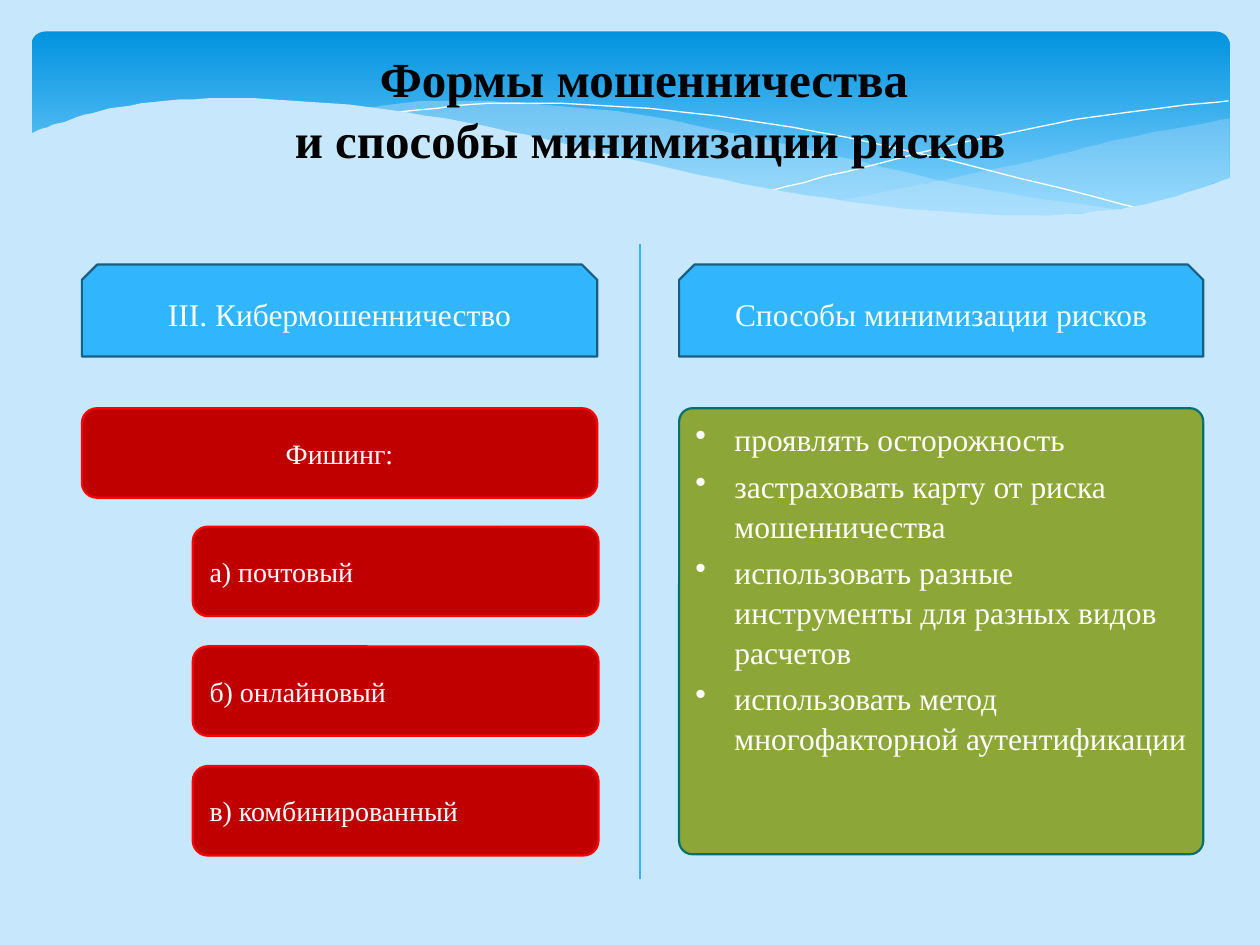
"""Build a slide on forms of fraud and ways to reduce the risks."""
from lxml import etree
from pptx import Presentation
from pptx.dml.color import RGBColor
from pptx.enum.shapes import MSO_CONNECTOR, MSO_SHAPE
from pptx.enum.text import MSO_ANCHOR, PP_ALIGN
from pptx.oxml.ns import qn
from pptx.util import Inches, Pt

ROUND = MSO_SHAPE.ROUNDED_RECTANGLE
SNIP = MSO_SHAPE.SNIP_2_SAME_RECTANGLE
LEFT, CENTER = PP_ALIGN.LEFT, PP_ALIGN.CENTER
FONT = "Times New Roman"
STEPS = 8
HEX = {
    "sky": "C6E7FC", "deep": "0293E0", "pale": "83D3FE", "white": "FFFFFF",
    "black": "000000", "blue": "31B6FD", "navy": "195F84", "dark": "C00000",
    "red": "FF0000", "green": "8CA737", "teal": "03706E",
}
RGB = {name: RGBColor.from_string(code) for name, code in HEX.items()}

deck = Presentation()
deck.slide_width, deck.slide_height = Inches(10), Inches(7.5)
slide = deck.slides.add_slide(deck.slide_layouts[6])
slide.background.fill.solid()
slide.background.fill.fore_color.rgb = RGB["sky"]
shapes = slide.shapes


def add_box(kind, place, fill, line):
    box = shapes.add_shape(kind, *[Inches(n) for n in place])
    box.shadow.inherit = False
    box.fill.solid()
    box.fill.fore_color.rgb = RGB[fill]
    box.line.color.rgb = RGB[line]
    box.line.width = Pt(1.25)
    box.text_frame.word_wrap = True
    return box


def write(para, text, size, color, align):
    para.text = text
    para.alignment = align
    para.font.name = FONT
    para.font.size = Pt(size)
    para.font.color.rgb = RGB[color]


band = add_box(ROUND, (0.25, 0.25, 9.51, 1.56), "deep", "deep")
band.adjustments[0] = 0.07
band.line.fill.background()
band.fill.gradient()
band.fill.gradient_angle = 270
for stop, color, pos in zip(band.fill.gradient_stops, ("deep", "pale"), (0, 0.9)):
    stop.color.rgb = RGB[color]
    stop.position = pos

waves = [
    (29, [[(976, 94), (891, 110), (805, 131), (661, 160)],
          [(661, 160), (745, 169), (824, 172), (905, 163), (976, 141)]]),
    (40, [[(893, 167), (775, 149), (629, 116), (514, 92), (420, 82), (344, 80),
           (286, 86)],
          [(286, 86), (383, 101), (530, 135), (665, 161), (785, 172), (893, 167)]]),
    (None, [[(309, 90), (401, 82), (533, 88), (695, 114), (907, 166)]]),
    (None, [[(613, 151), (748, 117), (866, 93), (975, 80)]]),
    (100, [[(977, 141), (899, 164), (809, 171), (688, 162), (555, 139), (418, 107),
            (292, 85), (177, 78), (95, 85), (46, 98), (23, 107)],
           [(23, 224), (977, 224)]]),
]
for alpha, curves in waves:
    points = []
    for knots in curves:
        points.append(knots[0])
        ends = [knots[0], *knots, knots[-1]]
        for quad in zip(ends, ends[1:], ends[2:], ends[3:]):
            for step in range(1, STEPS + 1):
                t = step / STEPS
                points.append(tuple(
                    b + t * (c - a + t * (2 * a - 5 * b + 4 * c - d
                                          + t * (3 * b - a - 3 * c + d))) / 2
                    for a, b, c, d in zip(*quad)))
    pen = shapes.build_freeform(*points[0], scale=Inches(0.01))
    pen.add_line_segments(points[1:], close=alpha is not None)
    wave = pen.convert_to_shape()
    wave.shadow.inherit = False
    if alpha is None:
        wave.fill.background()
        wave.line.color.rgb = RGB["white"]
        wave.line.width = Pt(0)
    else:
        wave.fill.solid()
        wave.fill.fore_color.rgb = RGB["sky"]
        wave.line.fill.background()
        tint = wave._element.spPr.find(qn("a:solidFill"))[0]
        etree.SubElement(tint, qn("a:alpha"), val=str(alpha * 1000))

title = shapes.add_textbox(Inches(1.41), Inches(0.31), Inches(7.5), Inches(1.04))
title.text_frame.word_wrap = True
head = title.text_frame.paragraphs[0]
write(head, "Формы мошенничества \vи способы минимизации рисков", 28, "black", CENTER)
head.font.bold = True
head.line_spacing = 1.05

labels = [
    (SNIP, (0.65, 2.1, 4.09, 0.73), "III. Кибермошенничество", CENTER),
    (SNIP, (5.39, 2.1, 4.16, 0.73), "Способы минимизации рисков", CENTER),
    (ROUND, (0.65, 3.24, 4.09, 0.71), "Фишинг:", CENTER),
]
for row, text in enumerate(("а) почтовый", "б) онлайновый", "в) комбинированный")):
    labels.append((ROUND, (1.53, 4.18 + row * 0.95, 3.22, 0.71), text, LEFT))
for kind, place, text, align in labels:
    size, fill, line = (18, "blue", "navy") if kind == SNIP else (16, "dark", "red")
    box = add_box(kind, place, fill, line)
    box.text_frame.vertical_anchor = MSO_ANCHOR.MIDDLE
    write(box.text_frame.paragraphs[0], text, size, "white", align)

advice = add_box(ROUND, (5.39, 3.24, 4.16, 3.54), "green", "teal")
advice.adjustments[0] = 0.03
frame = advice.text_frame
frame.vertical_anchor = MSO_ANCHOR.TOP
tips = [
    "проявлять осторожность",
    "застраховать карту от риска мошенничества",
    "использовать разные инструменты для разных видов расчетов",
    "использовать метод многофакторной аутентификации",
]
for num, tip in enumerate(tips):
    para = frame.add_paragraph() if num else frame.paragraphs[0]
    write(para, tip, 18, "white", LEFT)
    para.line_spacing = 1.05
    para.space_before = para.space_after = Pt(2)
    props = para._p.get_or_add_pPr()
    props.set("marL", str(Inches(0.31)))
    props.set("indent", str(-Inches(0.31)))
    mark = etree.Element(qn("a:buChar"), char="•")
    props.find(qn("a:defRPr")).addprevious(mark)

rule = shapes.add_connector(
    MSO_CONNECTOR.STRAIGHT, Inches(5.08), Inches(1.94), Inches(5.08), Inches(6.98))
rule.line.color.rgb = RGB["blue"]
rule.line.width = Pt(0.75)
etree.SubElement(rule._element.spPr, qn("a:effectLst"))

deck.save("out.pptx")
